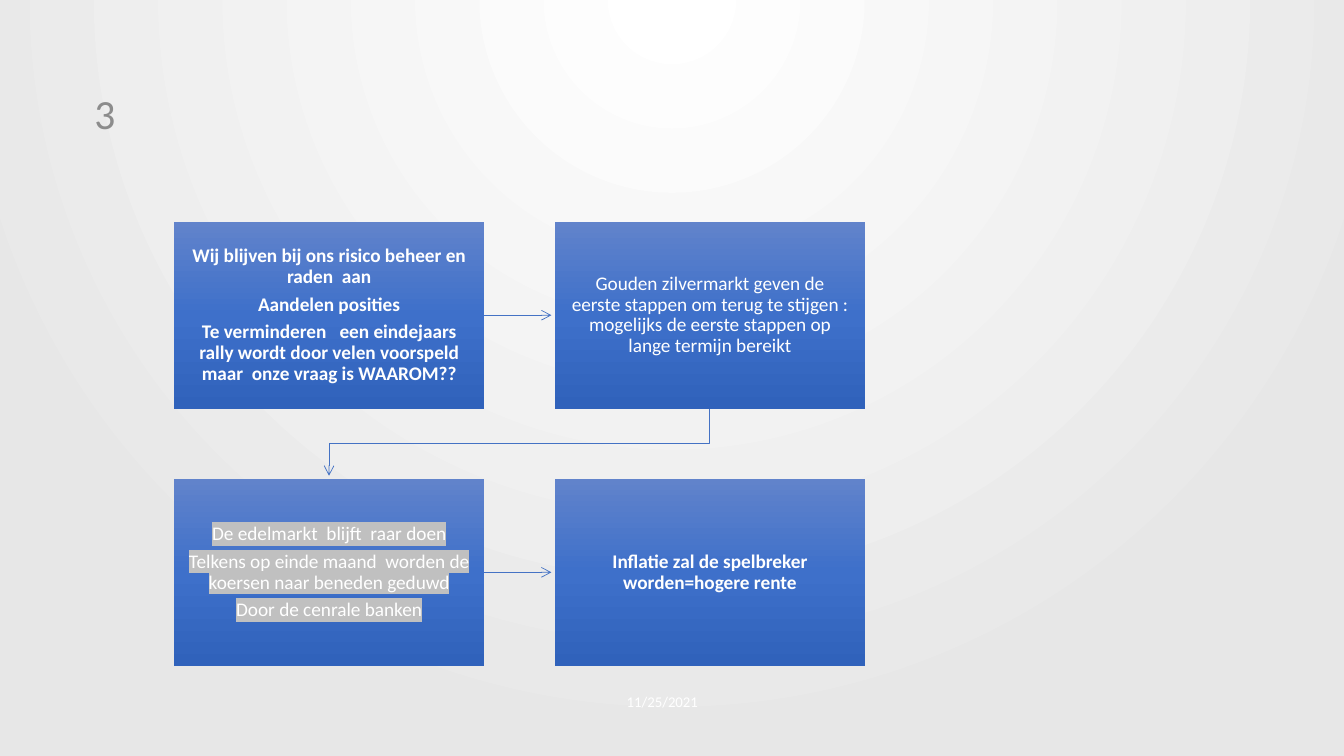
import pptx
import pptx.util
import lxml.etree
from dataclasses import dataclass
from pptx.dml.color import RGBColor
from pptx.enum.shapes import MSO_CONNECTOR, MSO_SHAPE
from pptx.enum.text import MSO_ANCHOR, PP_ALIGN
from pptx.oxml.ns import qn
from pptx.util import Inches


@dataclass(frozen=True)
class Theme:
    font: str = "Calibri"
    white: str = "FFFFFF"
    grey: str = "8C8C8C"
    arrow: str = "4472C4"
    highlight: str = "C0C0C0"
    page: tuple = ((0, "FFFFFF"), (100, "E7E7E7"))
    step: tuple = ((0, "6183CB"), (50, "3E70CA"), (100, "3062BB"))
    number_size: int = 28
    step_size: int = 13
    date_size: int = 10


T = Theme()

# Steps in reading order: paragraphs, bold, highlighted
STEPS = [
    (["Wij blijven bij ons risico beheer en raden  aan",
      "Aandelen posities",
      "Te verminderen   een eindejaars rally wordt door velen voorspeld "
      "maar  onze vraag is WAAROM??"], True, False),
    (["Gouden zilvermarkt geven de eerste stappen om terug te stijgen : "
      "mogelijks de eerste stappen op lange termijn bereikt"], False, False),
    (["De edelmarkt  blijft  raar doen",
      "Telkens op einde maand  worden de koersen naar beneden geduwd",
      "Door de cenrale banken"], False, True),
    (["Inflatie zal de spelbreker worden=hogere rente"], True, False),
]


def add(parent, tag, **attrs):
    return lxml.etree.SubElement(parent, qn(tag), attrs)


def set_gradient(fill, owner, stops, circle=False):
    fill.gradient()
    grad = next(owner.iter(qn("a:gradFill")))
    for child in list(grad):
        grad.remove(child)
    gs_list = add(grad, "a:gsLst")
    for pos, color in stops:
        gs = add(gs_list, "a:gs", pos=str(pos * 1000))
        add(gs, "a:srgbClr", val=color)
    if circle:
        shade = add(grad, "a:path", path="circle")
        add(shade, "a:fillToRect", l="43000", t="0", r="43000", b="100000")
    else:
        add(grad, "a:lin", ang="5400000", scaled="0")


def write(tf, lines, size, color, align, bold=False, highlight=False, after=0):
    tf.word_wrap = True
    tf.vertical_anchor = MSO_ANCHOR.MIDDLE
    for i, line in enumerate(lines):
        p = tf.add_paragraph() if i else tf.paragraphs[0]
        r = p.add_run()
        r.text = line
        p.alignment = align
        p.line_spacing = 0.9
        p.space_before = pptx.util.Pt(0)
        p.space_after = pptx.util.Pt(after)
        p.font.name = T.font
        p.font.size = pptx.util.Pt(size)
        p.font.bold = bold
        p.font.color.rgb = RGBColor.from_string(color)
        if highlight:
            mark = add(r._r.get_or_add_rPr(), "a:highlight")
            add(mark, "a:srgbClr", val=T.highlight)


def add_label(s, box, text, size, color, align):
    sp = s.shapes.add_textbox(*map(Inches, box))
    write(sp.text_frame, [text], size, color, align)


def add_step(s, box, lines, bold, highlight):
    sp = s.shapes.add_shape(MSO_SHAPE.RECTANGLE, *map(Inches, box))
    sp.shadow.inherit = False
    sp.line.fill.background()
    set_gradient(sp.fill, sp._element.spPr, T.step)
    tf = sp.text_frame
    tf.margin_left = tf.margin_right = Inches(0.14)
    tf.margin_top = tf.margin_bottom = Inches(0.15)
    write(tf, lines, T.step_size, T.white, PP_ALIGN.CENTER, bold, highlight, 4.6)


def add_arrow(s, points):
    points = [(Inches(x), Inches(y)) for x, y in points]
    if len(points) == 2:
        sp = s.shapes.add_connector(MSO_CONNECTOR.STRAIGHT, *points[0], *points[1])
    else:
        outline = s.shapes.build_freeform(*points[0])
        outline.add_line_segments(points[1:], close=False)
        sp = outline.convert_to_shape()
        sp.fill.background()
    sp.line.color.rgb = RGBColor.from_string(T.arrow)
    sp.line.width = pptx.util.Pt(0.5)
    add(sp.line._get_or_add_ln(), "a:tailEnd", type="arrow")
    add(sp._element.spPr, "a:effectLst")


def add_flow(s, box):
    left, top, width, height = box
    step_w, step_h, reach = 2.91, 1.75, 0.63
    dx, dy = width - step_w, height - step_h
    # Arrows within each row
    for row in range(2):
        x, y = left + step_w, top + row * dy + step_h / 2
        add_arrow(s, [(x, y), (x + reach, y)])
    # Bent arrow from the first row to the second
    x, y = left + step_w / 2, top + step_h
    bend = y + 0.33
    add_arrow(s, [(x + dx, y), (x + dx, bend), (x, bend), (x, y + reach)])
    # Steps in a two by two grid
    for i, step in enumerate(STEPS):
        row, col = divmod(i, 2)
        add_step(s, (left + col * dx, top + row * dy, step_w, step_h), *step)


def main():
    prs = pptx.Presentation()
    prs.slide_width = pptx.util.Emu(11522075)
    prs.slide_height = pptx.util.Emu(6480175)
    s = prs.slides.add_slide(prs.slide_layouts[6])
    set_gradient(s.background.fill, s._element, T.page, circle=True)
    # Slide number, flow and date
    add_label(s, (0.34, 0.83, 0.84, 0.52), "3", T.number_size, T.grey, PP_ALIGN.RIGHT)
    add_flow(s, (1.63, 2.08, 6.48, 4.16))
    add_label(s, (5.21, 6.44, 2, 0.3), "11/25/2021", T.date_size, T.white,
              PP_ALIGN.CENTER)
    prs.save("out.pptx")


if __name__ == "__main__":
    main()
